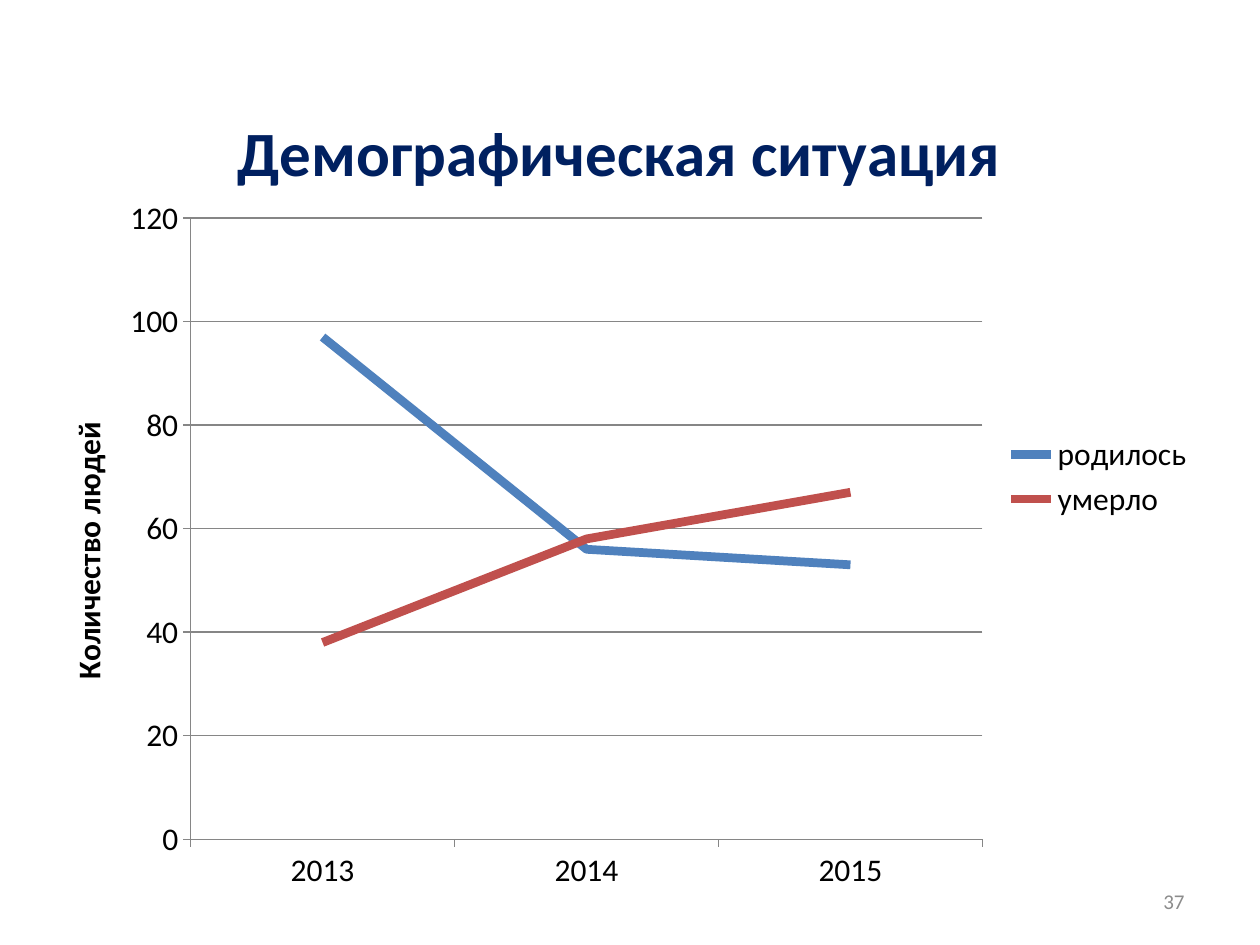
from dataclasses import dataclass

from lxml import etree
from pptx import Presentation
from pptx.chart.data import CategoryChartData
from pptx.dml.color import RGBColor
from pptx.enum.chart import XL_CHART_TYPE, XL_LEGEND_POSITION, XL_TICK_MARK
from pptx.enum.text import MSO_ANCHOR, PP_ALIGN
from pptx.util import Pt

LINE = XL_CHART_TYPE.LINE
RIGHT_LEGEND = XL_LEGEND_POSITION.RIGHT
TICK_OUT = XL_TICK_MARK.OUTSIDE
TICK_NONE = XL_TICK_MARK.NONE
MIDDLE = MSO_ANCHOR.MIDDLE
ALIGN_RIGHT = PP_ALIGN.RIGHT
CHART_NS = "http://schemas.openxmlformats.org/drawingml/2006/chart"


@dataclass(frozen=True)
class Theme:
    font: str = "Calibri"
    heading: RGBColor = RGBColor(0x00, 0x20, 0x60)
    text: RGBColor = RGBColor(0x00, 0x00, 0x00)
    page: RGBColor = RGBColor(0x8C, 0x8C, 0x8C)
    grid: RGBColor = RGBColor(0x86, 0x86, 0x86)
    born: RGBColor = RGBColor(0x4F, 0x81, 0xBD)
    died: RGBColor = RGBColor(0xC0, 0x50, 0x4D)
    heading_size: Pt = Pt(36)
    text_size: Pt = Pt(18)
    page_size: Pt = Pt(12)


theme = Theme()


def write(paragraph, text, size, color, bold=False):
    run = paragraph.add_run()
    run.text = text
    run.font.name = theme.font
    run.font.size = size
    run.font.bold = bold
    run.font.color.rgb = color


def place(parent, index, **values):
    for old in parent.findall(f"{{{CHART_NS}}}layout"):
        parent.remove(old)
    layout = etree.Element(f"{{{CHART_NS}}}layout")
    manual = etree.SubElement(layout, f"{{{CHART_NS}}}manualLayout")
    for tag, value in values.items():
        etree.SubElement(manual, f"{{{CHART_NS}}}{tag}").set("val", str(value))
    parent.insert(index, layout)


deck = Presentation()
deck.slide_width, deck.slide_height = Pt(720), Pt(540)
slide = deck.slides.add_slide(deck.slide_layouts[6])

population = CategoryChartData(number_format="General")
population.categories = ["2013", "2014", "2015"]
population.add_series("родилось", (97, 56, 53))
population.add_series("умерло", (38, 58, 67))
chart = slide.shapes.add_chart(
    LINE, Pt(14.4), Pt(25.9), Pt(675.4), Pt(493.2), population
).chart
chart.font.name = theme.font
chart.font.size = theme.text_size
chart.font.color.rgb = theme.text

chart.has_title = True
heading = chart.chart_title
write(heading.text_frame.paragraphs[0], "Демографическая ситуация",
      theme.heading_size, theme.heading, bold=True)
place(heading._element, 1, xMode="edge", yMode="edge", x=0.17, y=0.06)

chart.has_legend = True
chart.legend.position = RIGHT_LEGEND
chart.legend.include_in_layout = False

years, people = chart.category_axis, chart.value_axis
for axis in (years, people):
    axis.major_tick_mark = TICK_OUT
    axis.minor_tick_mark = TICK_NONE
    axis.format.line.color.rgb = theme.grid
    axis.format.line.width = Pt(0.75)
people.minimum_scale, people.maximum_scale, people.major_unit = 0, 120, 20
people.has_major_gridlines = True
people.major_gridlines.format.line.color.rgb = theme.grid
people.major_gridlines.format.line.width = Pt(0.75)
people.has_title = True
people_title = people.axis_title
write(people_title.text_frame.paragraphs[0], "Количество людей",
      theme.text_size, theme.text, bold=True)
people_title.text_frame._txBody.bodyPr.set("rot", "-5400000")
people_title.text_frame._txBody.bodyPr.set("vert", "horz")
place(people_title._element, 1, xMode="edge", yMode="edge", x=0.03, y=0.43)

plot = chart.plots[0]
plot.vary_by_categories = False
for series, color in zip(plot.series, (theme.born, theme.died)):
    series.smooth = False
    series.format.line.color.rgb = color
    series.format.line.width = Pt(5)
place(chart._chartSpace.chart.plotArea, 0, layoutTarget="inner",
      xMode="edge", yMode="edge", x=0.14, y=0.2, w=0.67, h=0.72)

page = slide.shapes.add_textbox(Pt(516), Pt(500.5), Pt(168), Pt(28.75)).text_frame
page.word_wrap = True
page.vertical_anchor = MIDDLE
page.paragraphs[0].alignment = ALIGN_RIGHT
write(page.paragraphs[0], "37", theme.page_size, theme.page)

deck.save("out.pptx")
